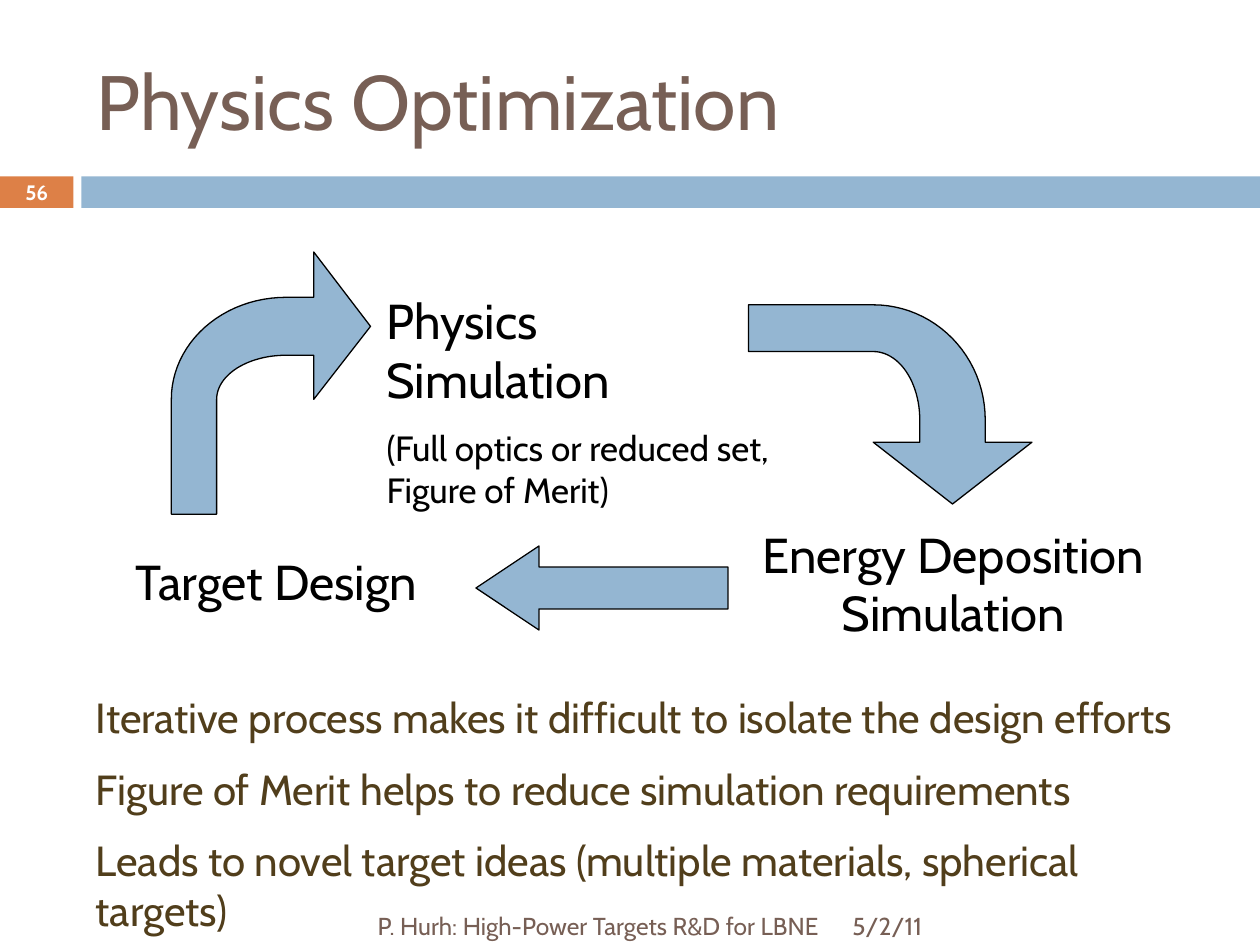
"""Build the Physics Optimization slide with its design cycle diagram."""
import math

import pptx
import pptx.dml.color
import pptx.enum.shapes
import pptx.enum.text
import pptx.oxml
import pptx.oxml.ns
import pptx.util

Pt = pptx.util.Pt
SHAPE = pptx.enum.shapes.MSO_SHAPE
ALIGN = pptx.enum.text.PP_ALIGN
ANCHOR = pptx.enum.text.MSO_ANCHOR
FONT = "Cabin"
COLORS = {
    "title": "775F55",
    "body": "513E1B",
    "black": "000000",
    "white": "FFFFFF",
    "orange": "DD8047",
    "blue": "94B6D2",
}


def rgb(name):
    return pptx.dml.color.RGBColor.from_string(COLORS[name])


def place(sp, left, top, width, height):
    sp.left, sp.top, sp.width, sp.height = map(Pt, (left, top, width, height))


def write(tf, text, size=28, color="black", bold=False, align=ALIGN.LEFT,
          before=0, first=True, bullet=True):
    p = tf.paragraphs[0] if first else tf.add_paragraph()
    if not bullet:
        pPr = p._p.get_or_add_pPr()
        pPr.set("marL", "0")
        pPr.set("indent", "0")
        pPr.append(pptx.oxml.parse_xml(
            "<a:buNone %s/>" % pptx.oxml.ns.nsdecls("a")))
    p.alignment = align
    p.space_before = Pt(before)
    r = p.add_run()
    r.text = text
    r.font.name = FONT
    r.font.size = Pt(size)
    r.font.bold = bold
    r.font.color.rgb = rgb(color)


def add_text(s, box, text, anchor=ANCHOR.TOP, **fmt):
    tf = s.shapes.add_textbox(*map(Pt, box)).text_frame
    tf.word_wrap = True
    tf.vertical_anchor = anchor
    write(tf, text, **fmt)
    return tf


def paint(sp, fill, outlined=True):
    sp.shadow.inherit = False
    sp.fill.solid()
    sp.fill.fore_color.rgb = rgb(fill)
    if outlined:
        sp.line.color.rgb = rgb("black")
        sp.line.width = Pt(0.75)
    else:
        sp.line.fill.background()


def add_bar(s, box, fill):
    paint(s.shapes.add_shape(SHAPE.RECTANGLE, *map(Pt, box)), fill, False)


def arc(center, radii, start, end, steps=24):
    angles = [math.radians(start + (end - start) * i / steps)
              for i in range(steps + 1)]
    return [(center[0] + radii[0] * math.cos(a),
             center[1] + radii[1] * math.sin(a)) for a in angles]


def add_bent_arrow(s, head, tail, inner_head, center, outer, inner, angles):
    start, end = angles
    points = (head + arc(center, outer, start, end) + tail
              + arc(center, inner, end, start) + inner_head)
    points = [(Pt(x), Pt(y)) for x, y in points]
    fb = s.shapes.build_freeform(*points[0], scale=1.0)
    fb.add_line_segments(points[1:], close=True)
    paint(fb.convert_to_shape(), "blue")


def add_cycle(s):
    tf = add_text(s, (213.8, 162.7, 234, 101.5), "Physics Simulation")
    write(tf, "(Full optics or reduced set, Figure of Merit)", size=20,
          before=10, first=False)
    add_text(s, (427.7, 295.9, 234, 74.9), "Energy Deposition Simulation",
             align=ALIGN.CENTER)
    add_text(s, (49.7, 311.8, 216, 41), "Target Design", align=ALIGN.CENTER)
    add_bent_arrow(
        s, head=[(211.7, 186.5), (179.3, 144), (179.3, 169.9)],
        tail=[(97.9, 293.8), (123.8, 293.8)],
        inner_head=[(179.3, 203), (179.3, 228.2)],
        center=(163.4, 228.2), outer=(65.5, 58.3), inner=(39.6, 25.2),
        angles=(270, 180))
    add_bent_arrow(
        s, head=[(544.3, 288), (589.7, 252.7), (563, 252.7)],
        tail=[(427.7, 174.2), (427.7, 200.9)],
        inner_head=[(525.6, 252.7), (499, 252.7)],
        center=(499, 239.8), outer=(64, 65.6), inner=(26.6, 38.9),
        angles=(0, -90))
    sp = s.shapes.add_shape(SHAPE.LEFT_ARROW, Pt(272), Pt(312), Pt(144), Pt(48))
    sp.adjustments[0], sp.adjustments[1] = 0.5, 0.75
    paint(sp, "blue")


def fill_title(s, text):
    sp = s.shapes.title
    place(sp, 48, 18, 642, 78)
    sp.text_frame.vertical_anchor = ANCHOR.MIDDLE
    write(sp.text_frame, text, size=44, color="title")


def fill_body(s, lines):
    sp = s.placeholders[1]
    place(sp, 47.5, 391.7, 642, 123.8)
    tf = sp.text_frame
    tf.auto_size = pptx.enum.text.MSO_AUTO_SIZE.NONE
    for i, line in enumerate(lines):
        write(tf, line, size=24, color="body", before=12 if i else 0,
              first=i == 0, bullet=False)


def add_footer(s):
    add_text(s, (480, 514.8, 210, 28.8), "5/2/11", anchor=ANCHOR.MIDDLE,
             size=14, color="title")
    add_text(s, (48, 514.8, 427, 28.8),
             "P. Hurh: High-Power Targets R&D for LBNE", anchor=ANCHOR.MIDDLE,
             size=14, color="title", align=ALIGN.RIGHT)
    add_text(s, (0, 100.3, 42, 19.4), "56", anchor=ANCHOR.MIDDLE, size=11.9,
             color="white", bold=True, align=ALIGN.CENTER)


def main():
    prs = pptx.Presentation()
    prs.slide_width, prs.slide_height = Pt(720), Pt(540)
    s = prs.slides.add_slide(prs.slide_layouts[1])
    add_bar(s, (0, 100.8, 42, 18), "orange")
    add_bar(s, (46.5, 100.8, 673.5, 18), "blue")
    fill_title(s, "Physics Optimization")
    add_cycle(s)
    fill_body(s, [
        "Iterative process makes it difficult to isolate the design efforts",
        "Figure of Merit helps to reduce simulation requirements",
        "Leads to novel target ideas (multiple materials, spherical targets)",
    ])
    add_footer(s)
    prs.save("out.pptx")


if __name__ == "__main__":
    main()
